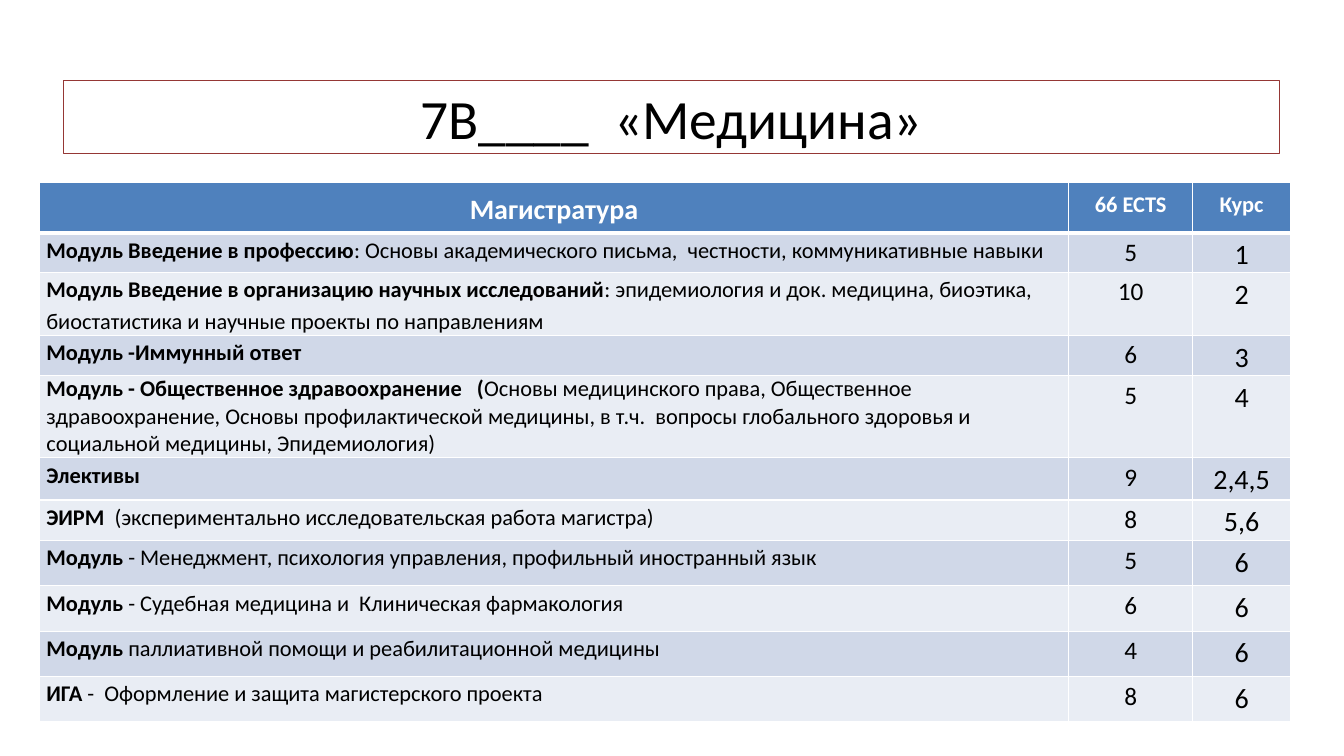
from lxml import etree
from pptx import Presentation
from pptx import util as u
from pptx.dml.color import RGBColor
from pptx.enum import shapes, text
from pptx.oxml import ns

WHITE, BLACK = "FFFFFF", "000000"
HEADER, BANDS = "4F81BD", ("D0D8E8", "E9EDF4")
COLUMN_WIDTHS = (10.21, 1.23, 0.97)
ROW_HEIGHTS = (0.5, 0.39, 0.62, 0.4, 0.81, 0.42, 0.4) + (0.45,) * 4
BODY_SIZES, HEADER_SIZES = (16, 18, 20), (20, 16, 16)
LINE_SPACING = 1.15
PUBLIC_HEALTH_ROW = 4

ROWS = (
    ("Магистратура", "", "66 ECTS", "Курс"),
    ("Модуль Введение в профессию",
     ": Основы академического письма,  честности, коммуникативные навыки", "5", "1"),
    ("Модуль Введение в организацию научных исследований",
     ": эпидемиология и док. медицина, биоэтика, биостатистика и научные проекты по направлениям", "10", "2"),
    ("Модуль -Иммунный ответ", "", "6", "3"),
    ("Модуль - Общественное здравоохранение   (",
     "Основы медицинского права, Общественное здравоохранение, Основы профилактической медицины, "
     "в т.ч.  вопросы глобального здоровья и социальной медицины, Эпидемиология)", "5", "4"),
    ("Элективы", "", "9", "2,4,5"),
    ("ЭИРМ  ", "(экспериментально исследовательская работа магистра)", "8", "5,6"),
    ("Модуль ", "- Менеджмент, психология управления, профильный иностранный язык", "5", "6"),
    ("Модуль ", "- Судебная медицина и  Клиническая фармакология", "6", "6"),
    ("Модуль", " паллиативной помощи и реабилитационной медицины", "4", "6"),
    ("ИГА", " -  Оформление и защита магистерского проекта", "8", "6"),
)


def paint(color_format, color):
    color_format.rgb = RGBColor.from_string(color)


def add_border(cell, side, points):
    properties = cell._tc.get_or_add_tcPr()
    line = etree.SubElement(properties, ns.qn(f"a:ln{side}"), w=str(u.Pt(points)))
    fill = etree.SubElement(line, ns.qn("a:solidFill"))
    etree.SubElement(fill, ns.qn("a:srgbClr"), val=WHITE)


presentation = Presentation()
presentation.slide_width = u.Inches(13.33)
presentation.slide_height = u.Inches(7.5)
slide = presentation.slides.add_slide(presentation.slide_layouts[6])

title = slide.shapes.add_shape(shapes.MSO_SHAPE.RECTANGLE,
                               u.Inches(0.63), u.Inches(0.8), u.Inches(12.06), u.Inches(0.72))
title.shadow.inherit = False
title.fill.background()
paint(title.line.color, "953735")
title.line.width = u.Pt(0.75)
title.text_frame.word_wrap = True
title.text_frame.vertical_anchor = text.MSO_ANCHOR.MIDDLE
paragraph = title.text_frame.paragraphs[0]
paragraph.text = "7В____  «Медицина»"
paragraph.alignment = text.PP_ALIGN.CENTER
paragraph.font.name = "Calibri"
paragraph.font.size = u.Pt(39.6)
paint(paragraph.font.color, BLACK)

frame = slide.shapes.add_table(len(ROWS), len(COLUMN_WIDTHS), u.Inches(0.39), u.Inches(1.81),
                               u.Inches(sum(COLUMN_WIDTHS)), u.Inches(sum(ROW_HEIGHTS)))
table = frame.table
for column, width in zip(table.columns, COLUMN_WIDTHS):
    column.width = u.Inches(width)

for row_index, (bold_part, plain_part, credits, course) in enumerate(ROWS):
    table.rows[row_index].height = u.Inches(ROW_HEIGHTS[row_index])
    is_header = row_index == 0
    sizes = HEADER_SIZES if is_header else BODY_SIZES
    for column_index, content in enumerate((bold_part, credits, course)):
        cell = table.cell(row_index, column_index)
        for side in "LRTB":
            header_edge = (row_index, side) in ((0, "B"), (1, "T"))
            add_border(cell, side, 3 if header_edge else 1)
        cell.fill.solid()
        paint(cell.fill.fore_color, HEADER if is_header else BANDS[(row_index - 1) % 2])
        if not is_header:
            cell.margin_left = cell.margin_right = u.Inches(0.07)
            cell.margin_top = cell.margin_bottom = 0
        is_module = column_index == 0 and not is_header
        paragraph = cell.text_frame.paragraphs[0]
        paragraph.alignment = text.PP_ALIGN.LEFT if is_module else text.PP_ALIGN.CENTER
        paragraph.line_spacing = 1.0 if is_module and row_index == PUBLIC_HEALTH_ROW else LINE_SPACING
        paragraph.font.name = "Calibri"
        paragraph.font.size = u.Pt(sizes[column_index])
        paragraph.font.bold = is_header
        paint(paragraph.font.color, WHITE if is_header else BLACK)
        run = paragraph.add_run()
        run.text = content
        if is_module:
            run.font.bold = True
            if plain_part:
                paragraph.add_run().text = plain_part

presentation.save("out.pptx")
